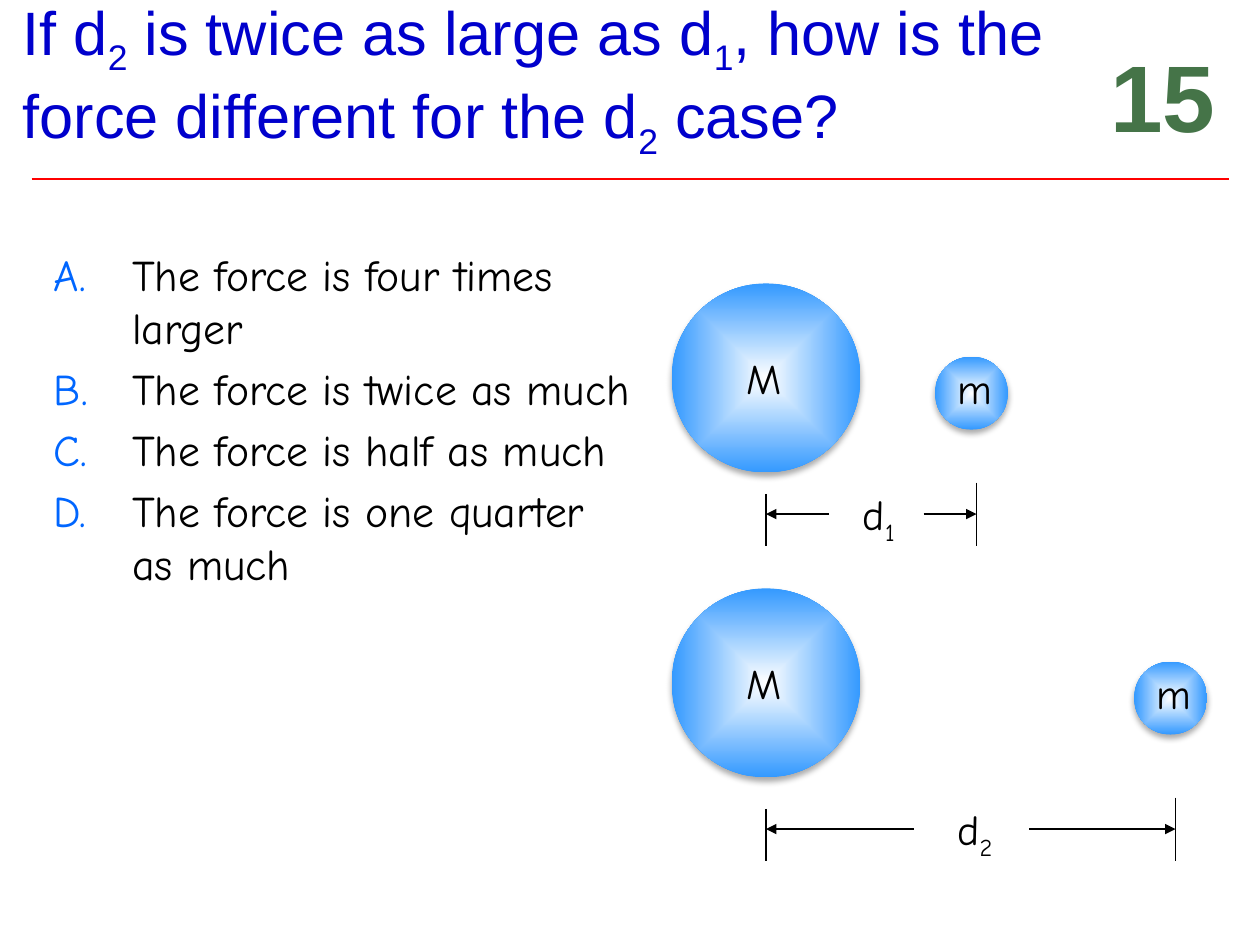
from lxml.etree import SubElement
from pptx import Presentation
from pptx.dml.color import RGBColor
from pptx.enum.shapes import MSO_CONNECTOR, MSO_SHAPE
from pptx.enum.text import MSO_ANCHOR, PP_ALIGN
from pptx.oxml import parse_xml
from pptx.oxml.ns import nsdecls, qn
from pptx.util import Inches, Pt

COLORS = {"title": "0000CC", "number": "457448", "rule": "FF0000", "text": "000000",
          "letter": "0066FF", "core": "FFFFFF", "rim": "3399FF"}
QUESTION = [("If d", "2"), (" is twice as large as d", "1"),
            (", how is the force different for the d", "2"), (" case?", "")]
ANSWERS = ["The force is four times larger", "The force is twice as much",
           "The force is half as much", "The force is one quarter as much"]
CASES = [
    {"subscript": "1", "top": 2.25, "end": 7.75, "axis": 4.08, "gap": (6.58, 7.33), "label": 6.75},
    {"subscript": "2", "top": 4.67, "end": 9.33, "axis": 6.58, "gap": (7.25, 8.17), "label": 7.5},
]
START = 6.08
TITLE_FONT = {"name": "Arial", "size": Pt(35), "bold": False}
NUMBER_FONT = {"name": "Arial", "size": Pt(54), "bold": True}
ANSWER_FONT = {"name": "Comic Neue", "size": Pt(25)}
LABEL_FONT = {"name": "Comic Neue", "size": Pt(24)}
GRADIENT = f"""<a:gradFill {nsdecls('a')} rotWithShape="1"><a:gsLst>
<a:gs pos="0"><a:srgbClr val="{COLORS['core']}"/></a:gs>
<a:gs pos="100000"><a:srgbClr val="{COLORS['rim']}"/></a:gs></a:gsLst>
<a:path path="shape"><a:fillToRect l="50000" t="50000" r="50000" b="50000"/></a:path></a:gradFill>"""
SHADOW = f"""<a:effectLst {nsdecls('a')}><a:outerShdw blurRad="{Pt(3.5)}" dist="{Pt(2.2)}" dir="5400000"
rotWithShape="0"><a:srgbClr val="000000"><a:alpha val="32000"/></a:srgbClr></a:outerShdw></a:effectLst>"""


def add_text(paragraph, pieces, font, color):
    for base, subscript in pieces:
        for text, offset in ((base, "0"), (subscript, "-25000")):
            if text:
                run = paragraph.add_run()
                run.text = text
                for key, value in font.items():
                    setattr(run.font, key, value)
                run.font.color.rgb = RGBColor.from_string(COLORS[color])
                run.font._element.set("baseline", offset)


def add_box(slide, left, top, width, height, wrap=True):
    frame = slide.shapes.add_textbox(*map(Inches, (left, top, width, height))).text_frame
    frame.word_wrap = wrap
    return frame


def add_label(slide, left, top, width, base, subscript=""):
    frame = add_box(slide, left, top, width, 0.5)
    add_text(frame.paragraphs[0], [(base, subscript)], LABEL_FONT, "text")


def add_line(slide, x1, y1, x2, y2, color="text", width=0.75, arrow=False):
    line = slide.shapes.add_connector(MSO_CONNECTOR.STRAIGHT, *map(Inches, (x1, y1, x2, y2)))
    line.line.color.rgb = RGBColor.from_string(COLORS[color])
    line.line.width = Pt(width)
    if arrow:
        SubElement(line.line._get_or_add_ln(), qn("a:tailEnd"), type="triangle")
    SubElement(line._element.spPr, qn("a:effectLst"))


def add_ball(slide, left, top, size):
    ball = slide.shapes.add_shape(MSO_SHAPE.OVAL, *map(Inches, (left, top, size, size)))
    ball.line.fill.background()
    properties = ball._element.spPr
    properties.insert(2, parse_xml(GRADIENT))
    properties.append(parse_xml(SHADOW))


def add_case(slide, case):
    top, end, axis = case["top"], case["end"], case["axis"]
    add_ball(slide, START - 0.75, top, 1.5)
    add_label(slide, START - 0.25, top + 0.5, 0.58, "M")
    add_ball(slide, end - 0.33, top + 0.58, 0.58)
    add_label(slide, end - 0.25, top + 0.58, 0.42, "m")
    for x, rise in ((START, 0.16), (end, 0.25)):
        add_line(slide, x, axis - rise, x, axis + 0.25)
    for inner, outer in zip(case["gap"], (START, end)):
        add_line(slide, inner, axis, outer, axis, arrow=True)
    add_label(slide, case["label"], axis - 0.25, 0.58, "d", case["subscript"])


def add_title(slide):
    title = slide.shapes.title
    place = {"left": 0.08, "top": 0, "width": 8.58, "height": 1.33}
    for key, value in place.items():
        setattr(title, key, Inches(value))
    title.text_frame.vertical_anchor = MSO_ANCHOR.BOTTOM
    title.text_frame.paragraphs[0].alignment = PP_ALIGN.LEFT
    add_text(title.text_frame.paragraphs[0], QUESTION, TITLE_FONT, "title")


def add_answers(slide):
    frame = add_box(slide, 0.33, 1.92, 4.8, 3.86)
    for index, answer in enumerate(ANSWERS):
        paragraph = frame.add_paragraph() if index else frame.paragraphs[0]
        paragraph.space_before = Pt(5)
        add_text(paragraph, [(answer, "")], ANSWER_FONT, "text")
        properties = paragraph._p.get_or_add_pPr()
        for key, indent in {"marL": 0.62, "indent": -0.62}.items():
            properties.set(key, str(Inches(indent)))
        SubElement(SubElement(properties, qn("a:buClr")), qn("a:srgbClr"), val=COLORS["letter"])
        SubElement(properties, qn("a:buFont"), typeface=ANSWER_FONT["name"])
        SubElement(properties, qn("a:buAutoNum"), type="alphaUcPeriod")


def main():
    """Build the quiz slide on force and distance."""
    deck = Presentation()
    deck.slide_width, deck.slide_height = Inches(10), Inches(7.5)
    slide = deck.slides.add_slide(deck.slide_layouts[5])
    add_title(slide)
    add_line(slide, 0.25, 1.42, 9.75, 1.42, "rule", 1.5)
    add_answers(slide)
    for case in CASES:
        add_case(slide, case)
    number = add_box(slide, 8.71, 0.25, 1.04, 1.01, wrap=False).paragraphs[0]
    number.alignment = PP_ALIGN.CENTER
    add_text(number, [("15", "")], NUMBER_FONT, "number")
    deck.save("out.pptx")


if __name__ == "__main__":
    main()
